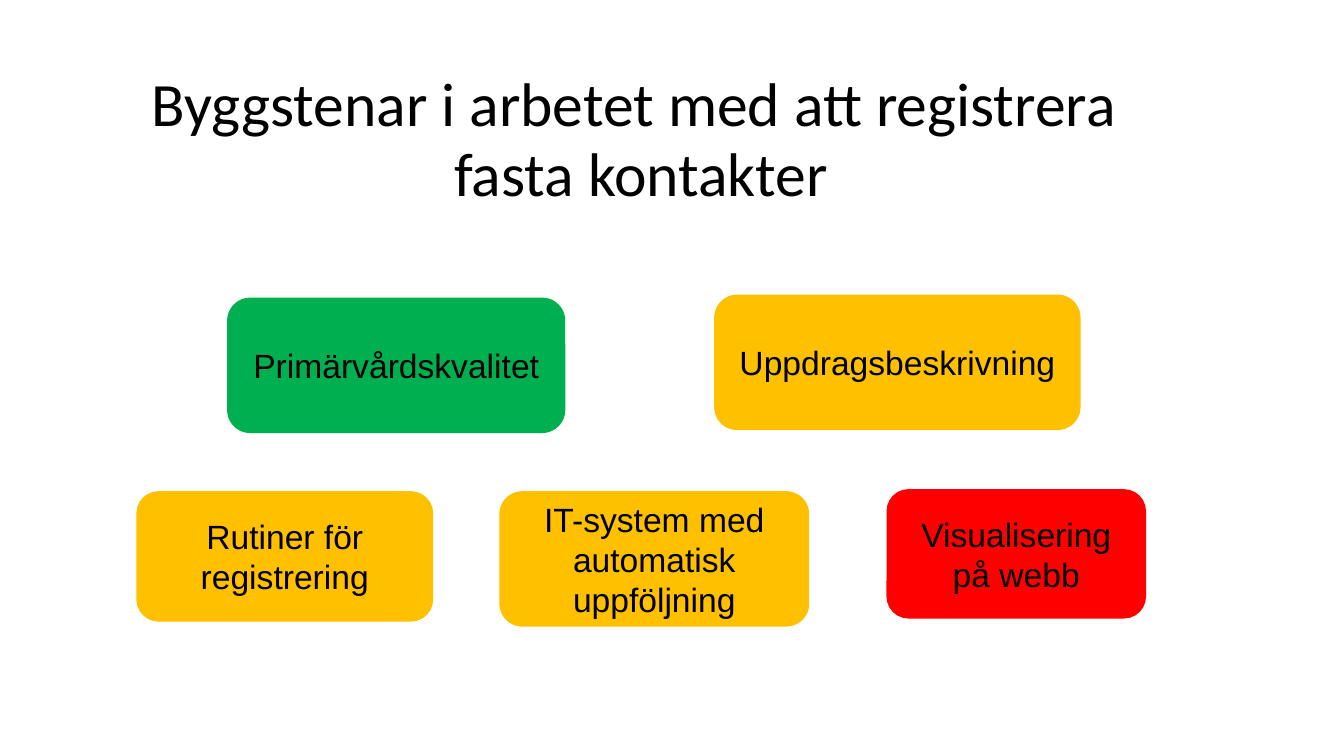
from pptx import Presentation
from pptx.dml.color import RGBColor
from pptx.enum.shapes import MSO_SHAPE
from pptx.enum.text import MSO_ANCHOR, PP_ALIGN
from pptx.util import Inches, Pt

ROUNDED = MSO_SHAPE.ROUNDED_RECTANGLE
TOP, MIDDLE = MSO_ANCHOR.TOP, MSO_ANCHOR.MIDDLE
CENTER = PP_ALIGN.CENTER
TITLE_ONLY = 5

BLACK = RGBColor(0x00, 0x00, 0x00)
GREEN = RGBColor(0x00, 0xB0, 0x50)
AMBER = RGBColor(0xFF, 0xC0, 0x00)
RED = RGBColor(0xFF, 0x00, 0x00)

TITLE = "Byggstenar i arbetet med att registrera \vfasta kontakter"
TITLE_BOX = (0.73, 0.65, 11.26, 1.35)
TITLE_FONT = {"name": "Calibri", "size": Pt(44)}
BLOCK_FONT = {"name": "Arial", "size": Pt(24)}

BUILDING_BLOCKS = [
    ("Primärvårdskvalitet", GREEN, (2.26, 2.96, 3.34, 1.33)),
    ("Uppdragsbeskrivning", AMBER, (7.09, 2.93, 3.62, 1.33)),
    ("Visualisering på webb", RED, (8.8, 4.86, 2.56, 1.27)),
    ("Rutiner för registrering", AMBER, (1.36, 4.88, 2.93, 1.28)),
    ("IT-system med automatisk uppföljning", AMBER, (4.96, 4.88, 3.06, 1.33)),
]


def write_text(shape, text, anchor, font_format):
    """Fill a shape with one centred black paragraph and return it."""
    frame = shape.text_frame
    frame.word_wrap = True
    frame.vertical_anchor = anchor
    paragraph = frame.paragraphs[0]
    paragraph.text = text
    paragraph.alignment = CENTER
    for name, value in font_format.items():
        setattr(paragraph.font, name, value)
    paragraph.font.color.rgb = BLACK
    return paragraph


def place_title(slide):
    """Move and format the title placeholder."""
    title = slide.shapes.title
    for name, value in zip(("left", "top", "width", "height"), TITLE_BOX):
        setattr(title, name, Inches(value))
    paragraph = write_text(title, TITLE, TOP, TITLE_FONT)
    paragraph.line_spacing = 0.95


def add_building_block(slide, text, color, box):
    """Add one coloured rounded block with its label."""
    shape = slide.shapes.add_shape(ROUNDED, *map(Inches, box))
    shape.shadow.inherit = False
    shape.fill.solid()
    shape.fill.fore_color.rgb = color
    shape.line.color.rgb = color
    shape.line.width = Pt(1)
    write_text(shape, text, MIDDLE, BLOCK_FONT)


def main():
    """Build the slide and save it."""
    presentation = Presentation()
    presentation.slide_width = Inches(13.33)
    presentation.slide_height = Inches(7.5)
    slide = presentation.slides.add_slide(presentation.slide_layouts[TITLE_ONLY])
    place_title(slide)
    for text, color, box in BUILDING_BLOCKS:
        add_building_block(slide, text, color, box)
    presentation.save("out.pptx")


if __name__ == "__main__":
    main()
